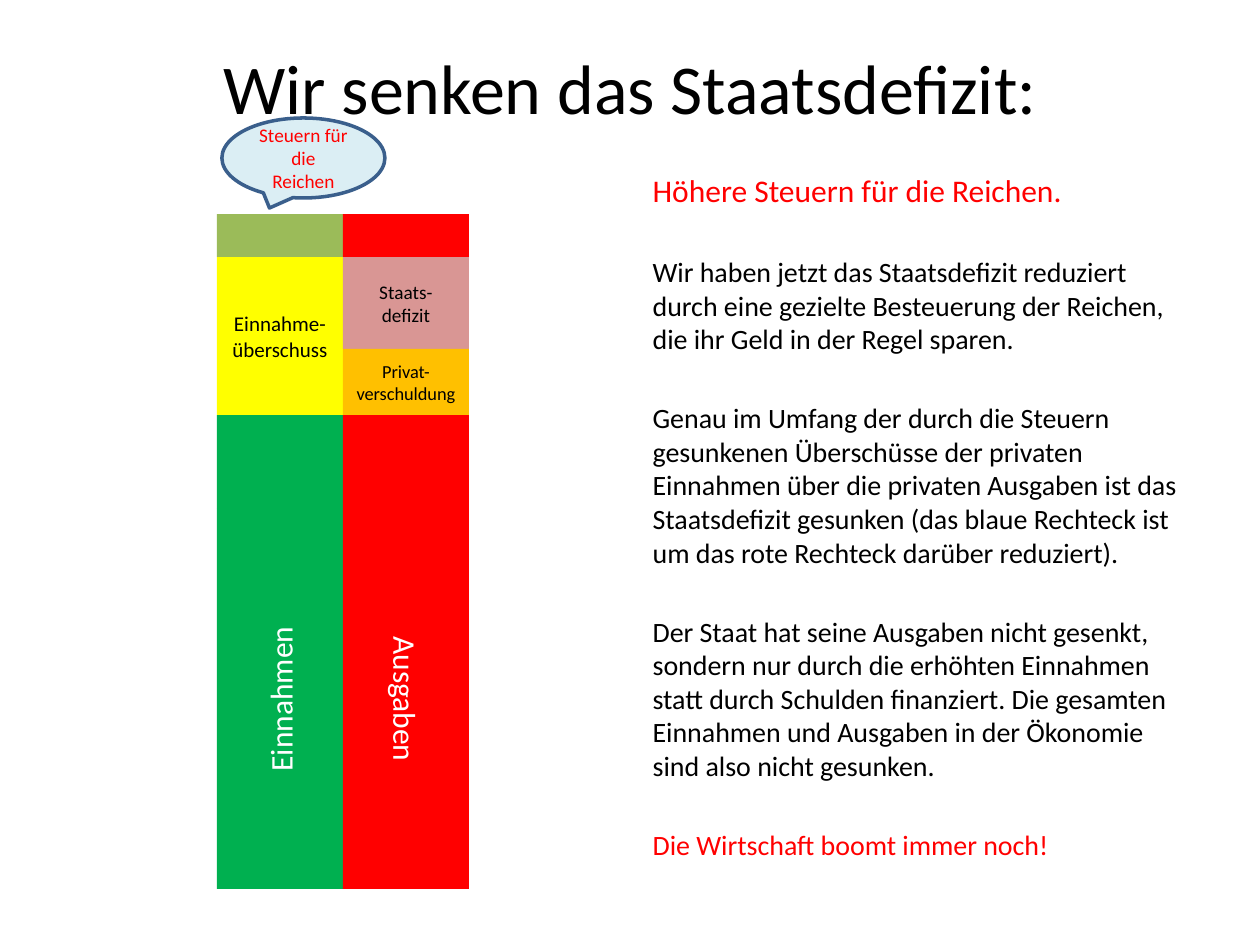
import pptx
import pptx.util
import pptx.dml.color
import pptx.enum.shapes
import pptx.enum.text
import pptx.oxml.ns
from dataclasses import dataclass

PX = 914400 / 126  # EMU per px


@dataclass(frozen=True)
class Theme:
    font: str = "Calibri"
    black: str = "000000"
    white: str = "FFFFFF"
    red: str = "FF0000"
    green: str = "00B050"
    olive: str = "9BBB59"
    yellow: str = "FFFF00"
    orange: str = "FFC000"
    rose: str = "D99694"
    bubble: str = "DBEEF4"
    bubble_line: str = "3A5F8C"
    title: float = 40
    lead: float = 18
    body: float = 16
    surplus: float = 12
    label: float = 11
    small: float = 10.5
    para_gap: float = 26


T = Theme()
SHAPE = pptx.enum.shapes.MSO_SHAPE
ALIGN = pptx.enum.text.PP_ALIGN
ANCHOR = pptx.enum.text.MSO_ANCHOR


def emu(*lengths):
    return [pptx.util.Emu(round(v * PX)) for v in lengths]


def rgb(color):
    return pptx.dml.color.RGBColor.from_string(color)


def place(sp, box):
    sp.left, sp.top, sp.width, sp.height = emu(*box)


def add_run(p, text, size, color):
    r = p.add_run()
    r.text = text
    r.font.name = T.font
    r.font.size = pptx.util.Pt(size)
    r.font.color.rgb = rgb(color)


def add_filled(slide, kind, box, fill, text="", size=T.label, color=T.black, vert=None):
    sp = slide.shapes.add_shape(kind, *emu(*box))
    sp.shadow.inherit = False
    sp.fill.solid()
    sp.fill.fore_color.rgb = rgb(fill)
    sp.line.fill.background()
    if text:
        tf = sp.text_frame
        tf.word_wrap = True
        tf.vertical_anchor = ANCHOR.MIDDLE
        p = tf.paragraphs[0]
        p.alignment = ALIGN.CENTER
        add_run(p, text, size, color)
        if vert:
            sp.element.txBody.find(pptx.oxml.ns.qn("a:bodyPr")).set("vert", vert)
    return sp


def add_title(slide, box, text):
    sp = slide.shapes.title
    place(sp, box)
    tf = sp.text_frame
    tf.auto_size = pptx.enum.text.MSO_AUTO_SIZE.NONE
    tf.vertical_anchor = ANCHOR.MIDDLE
    p = tf.paragraphs[0]
    p.alignment = ALIGN.CENTER
    add_run(p, text, T.title, T.black)


def add_body(slide, box, paragraphs):
    sp = slide.placeholders[1]
    place(sp, box)
    tf = sp.text_frame
    tf.auto_size = pptx.enum.text.MSO_AUTO_SIZE.NONE
    for i, (text, size, color) in enumerate(paragraphs):
        p = tf.add_paragraph() if i else tf.paragraphs[0]
        p.space_before = pptx.util.Pt(T.para_gap if i else 0)
        # Plain paragraphs: no bullet, no hanging indent
        pPr = p._p.get_or_add_pPr()
        pPr.set("marL", "0")
        pPr.set("indent", "0")
        pPr.append(pptx.oxml.parse_xml(
            f'<a:buNone {pptx.oxml.ns.nsdecls("a")}/>'))
        add_run(p, text, size, color)


def add_stack(slide, box, segments):
    """Stack segments downwards; each is (height, fill, *label settings)."""
    x, y, w, h = box
    for height, fill, *label in segments:
        add_filled(slide, SHAPE.RECTANGLE, (x, y, w, height), fill, *label)
        y += height


def add_balance(slide, box):
    x, y, w, h = box
    col = w // 2
    # Income column
    add_stack(slide, (x, y, col, h), [
        (43, T.olive),
        (158, T.yellow, "Einnahme- überschuss", T.surplus),
        (94, T.green),
        (380, T.green, "Einnahmen", T.lead, T.white, "vert270"),
    ])
    # Spending column
    add_stack(slide, (x + col, y, col, h), [
        (43, T.red),
        (92, T.rose, "Staats- defizit", T.label),
        (66, T.orange, "Privat- verschuldung", T.small),
        (94, T.red),
        (380, T.red, "Ausgaben", T.lead, T.white, "vert"),
    ])
    # Speech bubble above the income column
    sp = add_filled(slide, SHAPE.OVAL_CALLOUT, (x + 5, y - 96, 163, 80), T.bubble,
                    "Steuern für die Reichen", T.label, T.red)
    sp.line.color.rgb = rgb(T.bubble_line)
    sp.line.width = pptx.util.Pt(2)


def main():
    prs = pptx.Presentation()
    prs.slide_width, prs.slide_height = emu(1260, 945)
    slide = prs.slides.add_slide(prs.slide_layouts[1])

    add_title(slide, (63, 38, 1134, 97), "Wir senken das Staatsdefizit:")
    add_body(slide, (640, 165, 557, 745), [
        ("Höhere Steuern für die Reichen.", T.lead, T.red),
        ("Wir haben jetzt das Staatsdefizit reduziert durch eine gezielte "
         "Besteuerung der Reichen, die ihr Geld in der Regel sparen.", T.body, T.black),
        ("Genau im Umfang der durch die Steuern gesunkenen Überschüsse der privaten "
         "Einnahmen über die privaten Ausgaben ist das Staatsdefizit gesunken (das "
         "blaue Rechteck ist um das rote Rechteck darüber reduziert).", T.body, T.black),
        ("Der Staat hat seine Ausgaben nicht gesenkt, sondern nur durch die erhöhten "
         "Einnahmen statt durch Schulden finanziert. Die gesamten Einnahmen und "
         "Ausgaben in der Ökonomie sind also nicht gesunken.", T.body, T.black),
        ("Die Wirtschaft boomt immer noch!", T.body, T.red),
    ])
    add_balance(slide, (217, 214, 252, 675))

    prs.save("out.pptx")


if __name__ == "__main__":
    main()
